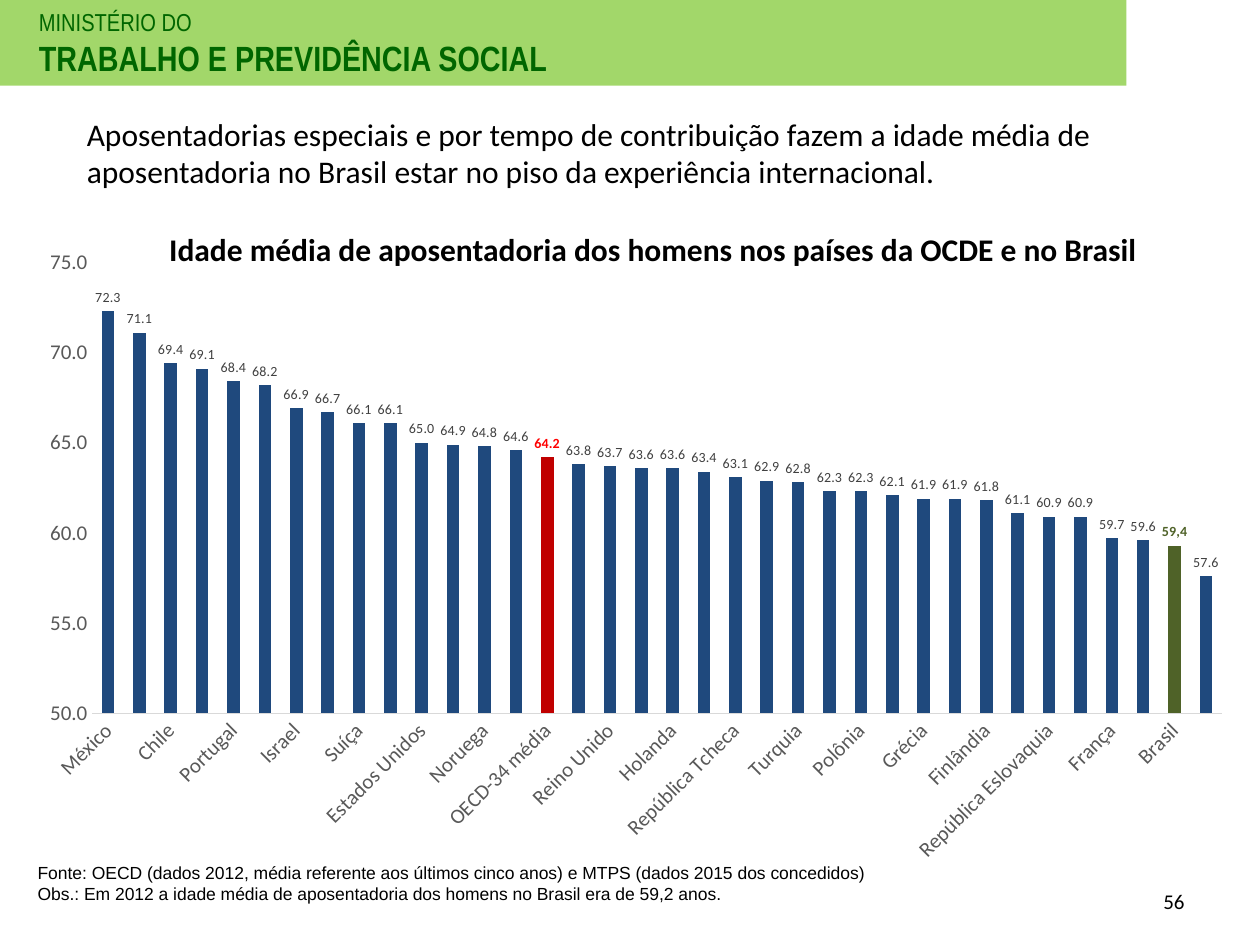
from lxml import etree
from pptx import Presentation
from pptx.chart.data import CategoryChartData as Data
from pptx.dml.color import RGBColor as RGB
from pptx.enum.chart import XL_CHART_TYPE as Kind, XL_LABEL_POSITION as Spot
from pptx.enum.chart import XL_TICK_MARK as Tick
from pptx.enum.shapes import MSO_SHAPE as Form
from pptx.enum.text import MSO_ANCHOR as Anchor, PP_ALIGN as Align
from pptx.oxml import parse_xml
from pptx.oxml.ns import qn
from pptx.util import Inches, Pt

theme = {
    "black": "000000", "band": "92D050", "head": "006600", "bar": "1F497D",
    "mean": "C00000", "brazil": "4F6228", "red": "FF0000", "axis": "595959",
    "rule": "D9D9D9", "label": "404040",
    "big": 20, "title": 18, "small": 14, "tick": 12, "note": 10, "value": 8,
}

deck = Presentation()
deck.slide_width, deck.slide_height = Inches(10), Inches(7.5)
slide = deck.slides.add_slide(deck.slide_layouts[6])
cell = deck.slide_width / 100  # square grid: 100 columns, 75 rows


def area(*cells):
    return [round(n * cell) for n in cells]


def style(font, size, color, face="Calibri", bold=False):
    font.size, font.name, font.bold = Pt(theme[size]), face, bold
    font.color.rgb = RGB.from_string(theme[color])


# Header band
band = slide.shapes.add_shape(Form.RECTANGLE, *area(0, 0, 89.4, 6.8))
band.shadow.inherit = False
band.line.fill.background()
band.fill.solid()
band.fill.fore_color.rgb = RGB.from_string(theme["band"])
tint = band.fill._xPr.find(qn("a:solidFill"))[0]
etree.SubElement(tint, qn("a:alpha")).set("val", "85000")

# Mean retirement age by country
ages = {
    "México": 72.3, "Coréia": 71.1, "Chile": 69.4, "Japão": 69.1,
    "Portugal": 68.4, "Islândia": 68.2, "Israel": 66.9, "Nova Zelândia": 66.7,
    "Suíça": 66.1, "Suécia": 66.1, "Estados Unidos": 65, "Australia": 64.9,
    "Noruega": 64.8, "Irlanda": 64.6, "OECD-34 média": 64.2, "Canada": 63.8,
    "Reino Unido": 63.7, "Estônia": 63.6, "Holanda": 63.6, "Dinamarca": 63.4,
    "República Tcheca": 63.1, "Eslovênia": 62.9, "Turquia": 62.8,
    "Espanha": 62.3, "Polônia": 62.3, "Alemanha": 62.1, "Grécia": 61.9,
    "Austria": 61.9, "Finlândia": 61.8, "Itália": 61.1,
    "República Eslovaquia": 60.9, "Hungria": 60.9, "França": 59.7,
    "Bélgica": 59.6, "Brasil": 59.3, "Luxemburgo": 57.6,
}
names = list(ages)
data = Data(number_format="0.0")
data.categories = names
data.add_series("Series 1", ages.values())
chart = slide.shapes.add_chart(
    Kind.COLUMN_CLUSTERED, *area(2, 18.8, 96.9, 50.7), data).chart
chart.has_title = chart.has_legend = False
style(chart.font, "note", "black")

# Axes
cats, vals = chart.category_axis, chart.value_axis
for axis in (cats, vals):
    axis.major_tick_mark = axis.minor_tick_mark = Tick.NONE
    axis.has_major_gridlines = False
    style(axis.tick_labels.font, "tick", "axis")
cats.format.line.color.rgb = RGB.from_string(theme["rule"])
cats.format.line.width = Pt(0.75)
vals.format.line.fill.background()
vals.minimum_scale, vals.maximum_scale, vals.major_unit = 50, 75, 5
vals.tick_labels.number_format = "0.0"
vals.tick_labels.number_format_is_linked = False

# Slanted names, every second one shown
root = cats._element
slant = root.find(qn("c:txPr")).find(qn("a:bodyPr"))
slant.set("rot", "-2700000")
slant.set("vert", "horz")
skip = etree.Element(qn("c:tickLblSkip"))
skip.set("val", "2")
root.find(qn("c:noMultiLvlLbl")).addprevious(skip)

# Fixed inner plot area, as shares of the chart
plot_xml = chart._chartSpace.chart.plotArea
for old in plot_xml.findall(qn("c:layout")):
    plot_xml.remove(old)
sides = "".join(f'<c:{tag} val="{n}"/>' for tag, n in [
    ("layoutTarget", "inner"), ("xMode", "edge"), ("yMode", "edge"),
    ("x", 0.055), ("y", 0.04), ("w", 0.925), ("h", 0.706)])
plot_xml.insert(0, parse_xml(
    '<c:layout xmlns:c="http://schemas.openxmlformats.org/drawingml/2006/chart">'
    f"<c:manualLayout>{sides}</c:manualLayout></c:layout>"))

# Bars and value labels
plot = chart.plots[0]
plot.gap_width, plot.vary_by_categories = 150, False
bars = plot.series[0]
bars.format.fill.solid()
bars.format.fill.fore_color.rgb = RGB.from_string(theme["bar"])
tags = bars.data_labels
tags.show_value, tags.position = True, Spot.OUTSIDE_END
tags.number_format, tags.number_format_is_linked = "0.0", False
style(tags.font, "value", "label")

# Highlighted bars
for name, fill, ink, words in [("OECD-34 média", "mean", "red", None),
                               ("Brasil", "brazil", "brazil", "59,4")]:
    point = bars.points[names.index(name)]
    point.format.fill.solid()
    point.format.fill.fore_color.rgb = RGB.from_string(theme[fill])
    tag = point.data_label
    if words:
        para = tag.text_frame.paragraphs[0]
        para.add_run().text = words
        font = para.runs[0].font
    else:
        font = tag.font
    style(font, "value", ink, bold=True)
    tag.position = Spot.OUTSIDE_END

# Texts: place, anchor, alignment, lines of (words, size, color, face, bold)
top, mid = Anchor.TOP, Anchor.MIDDLE
for place, anchor, align, lines in [
    ((2.1, 0.1, 57.5, 6.7), top, Align.LEFT, [
        ("MINISTÉRIO DO", "small", "head", "Arial Narrow", False),
        ("TRABALHO E PREVIDÊNCIA SOCIAL", "big", "head", "Arial Narrow", True)]),
    ((5.9, 7.3, 91.9, 9.6), mid, Align.LEFT, [
        ("Aposentadorias especiais e por tempo de contribuição fazem a idade "
         "média de aposentadoria no Brasil estar no piso da experiência "
         "internacional.", "title", "black", "Calibri", False)]),
    ((11.7, 17.8, 80.3, 4), top, Align.CENTER, [
        ("Idade média de aposentadoria dos homens nos países da OCDE e no Brasil",
         "title", "black", "Calibri", True)]),
    ((2, 67.9, 82.3, 6.1), top, Align.LEFT, [
        ("Fonte: OECD (dados 2012, média referente aos últimos cinco anos) e "
         "MTPS (dados 2015 dos concedidos)", "note", "black", "Arial", False),
        ("Obs.: Em 2012 a idade média de aposentadoria dos homens no Brasil "
         "era de 59,2 anos.", "note", "black", "Arial", False)]),
    ((71.7, 69.5, 23.3, 4), mid, Align.RIGHT, [
        ("56", "tick", "black", "Calibri", False)]),
]:
    frame = slide.shapes.add_textbox(*area(*place)).text_frame
    frame.word_wrap, frame.vertical_anchor = True, anchor
    frame.text = "\n".join(line[0] for line in lines)
    for para, line in zip(frame.paragraphs, lines):
        para.alignment = align
        style(para.font, *line[1:])

deck.save("out.pptx")
